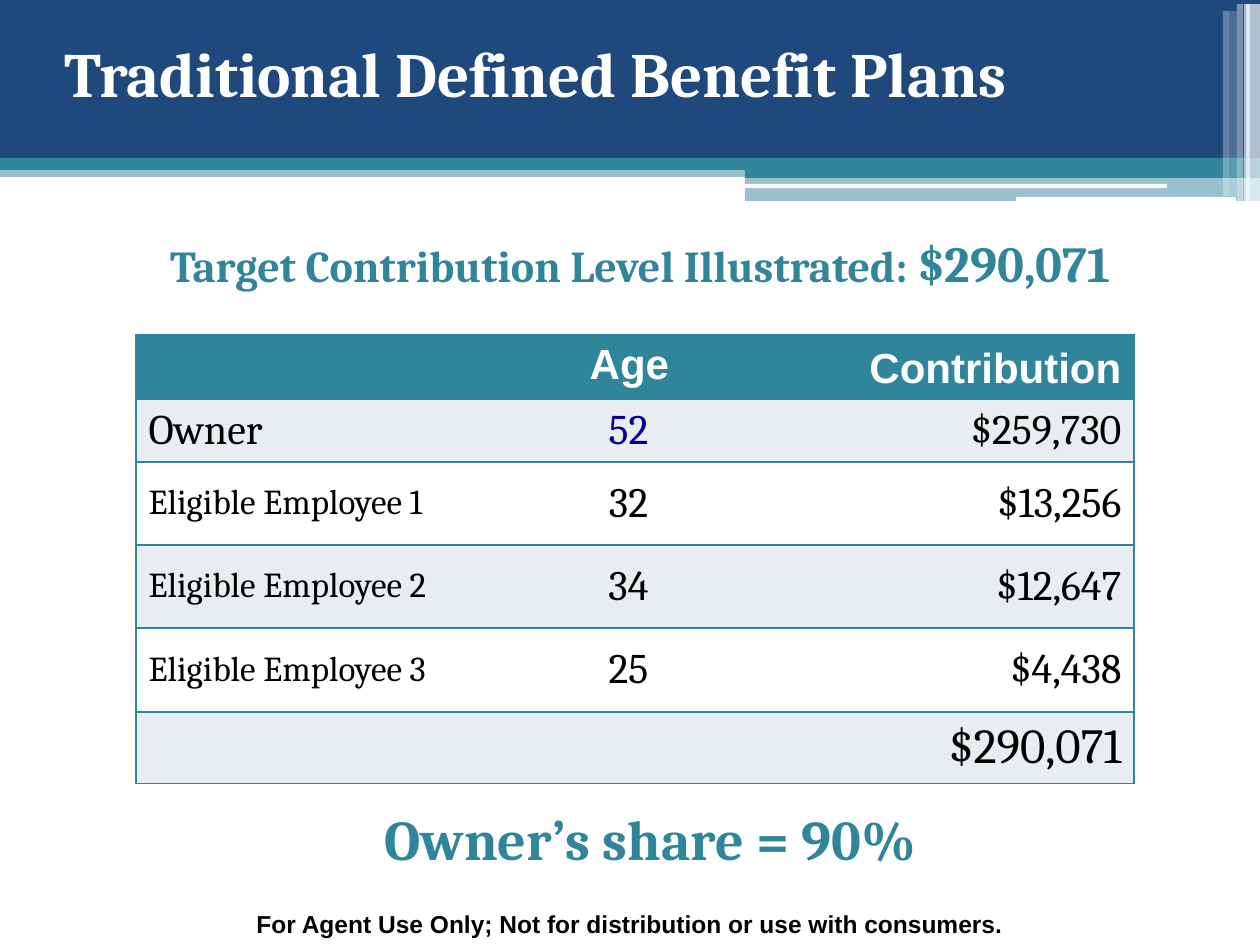
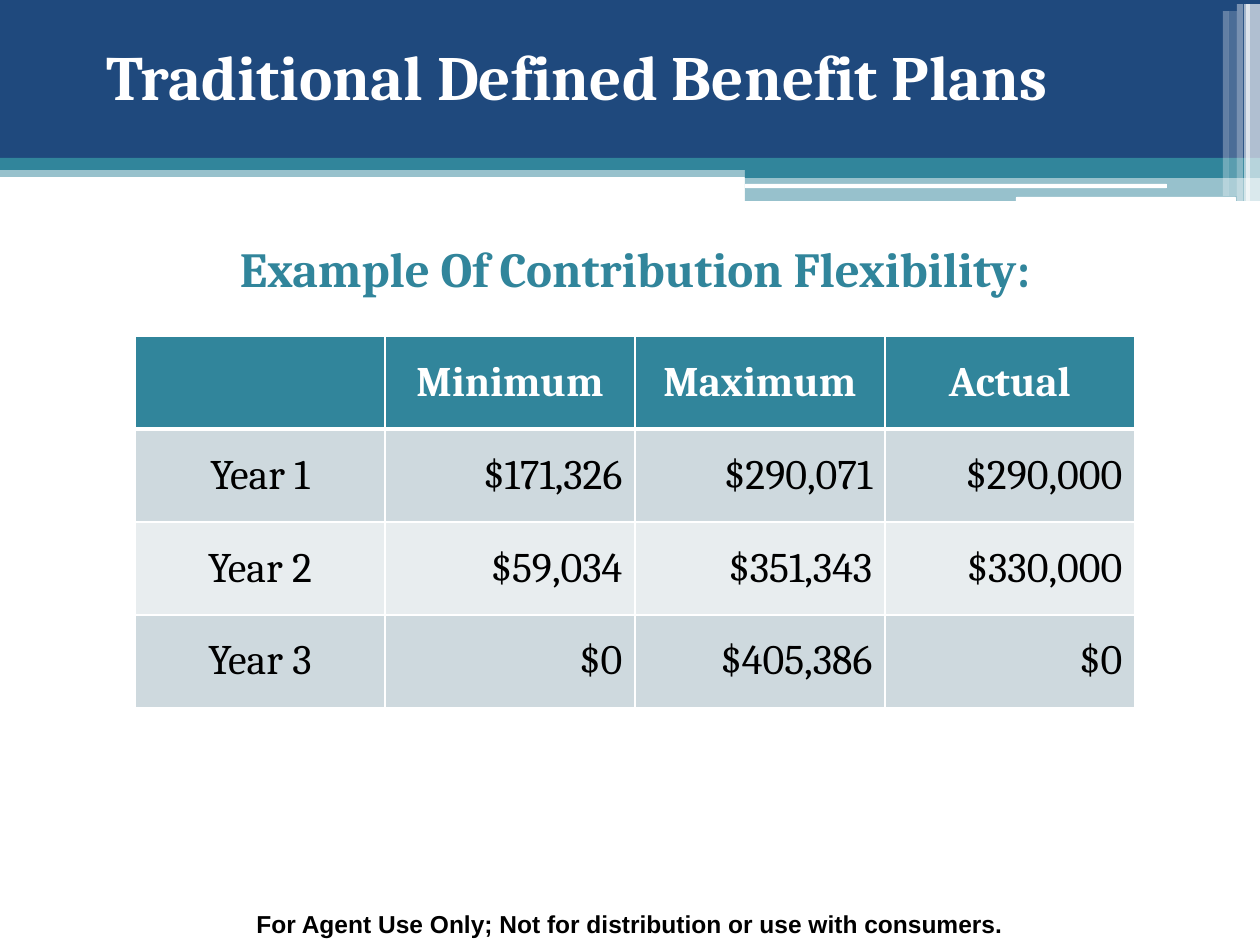
from dataclasses import dataclass

from lxml import etree
from pptx import Presentation
from pptx import util as u
from pptx.dml.color import RGBColor
from pptx.enum import shapes, text
from pptx.oxml.ns import qn


@dataclass(frozen=True)
class Theme:
    navy: str = "1F497D"
    teal: str = "31859B"
    white: str = "FFFFFF"
    black: str = "000000"
    blue: str = "000099"
    band_dark: str = "CED9DE"
    band_light: str = "E8EDEF"
    serif: str = "Cambria"
    sans: str = "Arial"
    title: float = 36
    share: float = 32
    large: float = 28
    amount: float = 28.8
    lead: float = 25.2
    body: float = 24
    label: float = 20
    footer: float = 14


T = Theme()
PX = 914400 / 126  # EMU in one px
W, H = 1260, 945
LEFT, CENTER, RIGHT = text.PP_ALIGN.LEFT, text.PP_ALIGN.CENTER, text.PP_ALIGN.RIGHT
TOP, MIDDLE, BOTTOM = text.MSO_ANCHOR.TOP, text.MSO_ANCHOR.MIDDLE, text.MSO_ANCHOR.BOTTOM


def px(*lengths):
    return [u.Emu(round(length * PX)) for length in lengths]


def write(holder, words, size=T.body, color=T.black, font=T.serif,
          bold=False, align=CENTER, anchor=TOP):
    """Write a string, or a list of (string, size) pairs, into a box or a cell."""
    frame = holder.text_frame
    frame.word_wrap = True
    anchored = holder if hasattr(holder, "is_merge_origin") else frame
    anchored.vertical_anchor = anchor
    paragraph = frame.paragraphs[0]
    paragraph.alignment = align
    for part, part_size in [(words, size)] if isinstance(words, str) else words:
        run = paragraph.add_run()
        run.text = part
        run.font.name, run.font.size, run.font.bold = font, u.Pt(part_size), bold
        run.font.color.rgb = RGBColor.from_string(color)


prs = Presentation()
prs.slide_width, prs.slide_height = px(W, H)
target, flexibility = [prs.slides.add_slide(prs.slide_layouts[6]) for _ in range(2)]

# Header band and stripes on both slides: left, top, width, height, colour, opacity
RECT, ROUND = shapes.MSO_SHAPE.RECTANGLE, shapes.MSO_SHAPE.ROUNDED_RECTANGLE
header = [
    (RECT, 0, 166, W, 11, T.teal, 50),
    (RECT, 0, 0, W, 159, T.navy, 100),
    (RECT, 0, 158, W, 12, T.teal, 100),
    (RECT, 745, 165, 515, 13, T.teal, 100),
    (RECT, 745, 177, 515, 24, T.teal, 50),
    (ROUND, 745, 184, 422, 4, T.white, 100),
    (ROUND, 1016, 197, 220, 5, T.white, 100),
    (RECT, 1252, 4, 8, 197, T.white, 65),
    (RECT, 1246, 4, 6, 197, T.white, 65),
    (RECT, 1244, 4, 6, 197, T.white, 60),
    (RECT, 1237, 4, 6, 197, T.white, 40),
    (RECT, 1229, 11, 8, 185, T.white, 20),
    (RECT, 1223, 11, 6, 185, T.white, 30),
]
for slide in (target, flexibility):
    for outline, left, top, width, height, color, opacity in header:
        band = slide.shapes.add_shape(outline, *px(left, top, width, height))
        band.shadow.inherit = False
        band.line.fill.background()
        band.fill.solid()
        band.fill.fore_color.rgb = RGBColor.from_string(color)
        if opacity < 100:
            tint = band.fill._xPr.find(".//" + qn("a:srgbClr"))
            etree.SubElement(tint, qn("a:alpha"), val=str(opacity * 1000))

# Titles, subtitles and footers
title = dict(size=T.title, color=T.white, bold=True)
accent = dict(color=T.teal, bold=True)
footer = ("For Agent Use Only; Not for distribution or use with consumers.",
          dict(size=T.footer, font=T.sans, bold=True))
heading = "Traditional Defined Benefit Plans"
lines = [
    (target, (52, 28, 1197, 89), heading, dict(title, align=LEFT)),
    (target, (21, 199, 1239, 126),
     [("Target Contribution Level Illustrated: ", T.lead), ("$290,071", T.amount)],
     dict(accent, anchor=MIDDLE)),
    (target, (325, 798, 651, 81), "Owner’s share = 90%", dict(accent, size=T.share)),
    (flexibility, (-53, 31, W, 89), heading, title),
    (flexibility, (73, 232, 1124, 72), "Example Of Contribution Flexibility:",
     dict(accent, size=T.large)),
    *[(slide, (0, 903, W, 42), *footer) for slide in (target, flexibility)],
]
for slide, place, words, style in lines:
    write(slide.shapes.add_textbox(*px(*place)), words, **style)

# Table contents
contributions = [
    ["Age", "", "Contribution"],
    ["Owner", "52", "$259,730"],
    ["Eligible Employee 1", "32", "$13,256"],
    ["Eligible Employee 2", "34", "$12,647"],
    ["Eligible Employee 3", "25", "$4,438"],
    ["$290,071", "", ""],
]
years = [
    ["", "Minimum", "Maximum", "Actual"],
    ["Year 1", "$171,326", "$290,071", "$290,000"],
    ["Year 2", "$59,034", "$351,343", "$330,000"],
    ["Year 3", "$0", "$405,386", "$0"],
]
tables = [
    (target, contributions, 136, 335, [420, 145, 433], [64, 62, 83, 83, 84, 71]),
    (flexibility, years, 135, 336, [250] * 4, [93] * 4),
]
for slide, rows, left, top, widths, heights in tables:
    grid = slide.shapes.add_table(len(rows), len(widths),
                                  *px(left, top, sum(widths), sum(heights))).table
    grid.first_row = grid.horz_banding = False
    for column, width in zip(grid.columns, px(*widths)):
        column.width = width
    for row, height in zip(grid.rows, px(*heights)):
        row.height = height

    by_owner = slide is target
    last = len(widths) - 1
    if by_owner:
        grid.cell(0, 0).merge(grid.cell(0, 1))
        grid.cell(5, 0).merge(grid.cell(5, 2))
        grid.cell(0, 0).margin_right = px(32)[0]  # sets Age over its column

    for r, row in enumerate(rows):
        for c, words in enumerate(row):
            cell = grid.cell(r, c)

            # Borders: teal rules without inner verticals, or a white grid
            rule = T.teal if by_owner else T.white
            points = dict(lnL=1, lnR=1, lnT=1, lnB=1)
            if by_owner:
                points.update(lnL=int(c == 0), lnR=int(c == last or r == 5))
            elif r < 2:
                points["lnT" if r else "lnB"] = 3
            for side, weight in points.items():
                edge = etree.SubElement(cell._tc.get_or_add_tcPr(), qn("a:" + side),
                                        w=str(u.Pt(weight)))
                paint = etree.SubElement(edge, qn("a:solidFill" if weight else "a:noFill"))
                if weight:
                    etree.SubElement(paint, qn("a:srgbClr"), val=rule)

            # Fill: teal header, then alternating bands
            bands = (T.white, T.band_light) if by_owner else (T.band_light, T.band_dark)
            cell.fill.solid()
            cell.fill.fore_color.rgb = RGBColor.from_string(bands[r % 2] if r else T.teal)

            # Text
            style = dict(anchor=MIDDLE, align=RIGHT)
            if r == 0:
                style.update(color=T.white, bold=True, align=CENTER)
            elif c == 0 and not by_owner:
                style.update(align=CENTER)
            if by_owner:
                style["align"] = (LEFT, CENTER, RIGHT)[c]
                if r == 0:
                    style.update(font=T.sans, align=RIGHT, anchor=BOTTOM if c else TOP)
                elif r == 5:
                    style.update(size=T.large, align=RIGHT)
                elif c == 0 and r > 1:
                    style.update(size=T.label)
                elif words == "52":
                    style.update(color=T.blue)
            if words:
                write(cell, words, **style)

prs.save("out.pptx")
